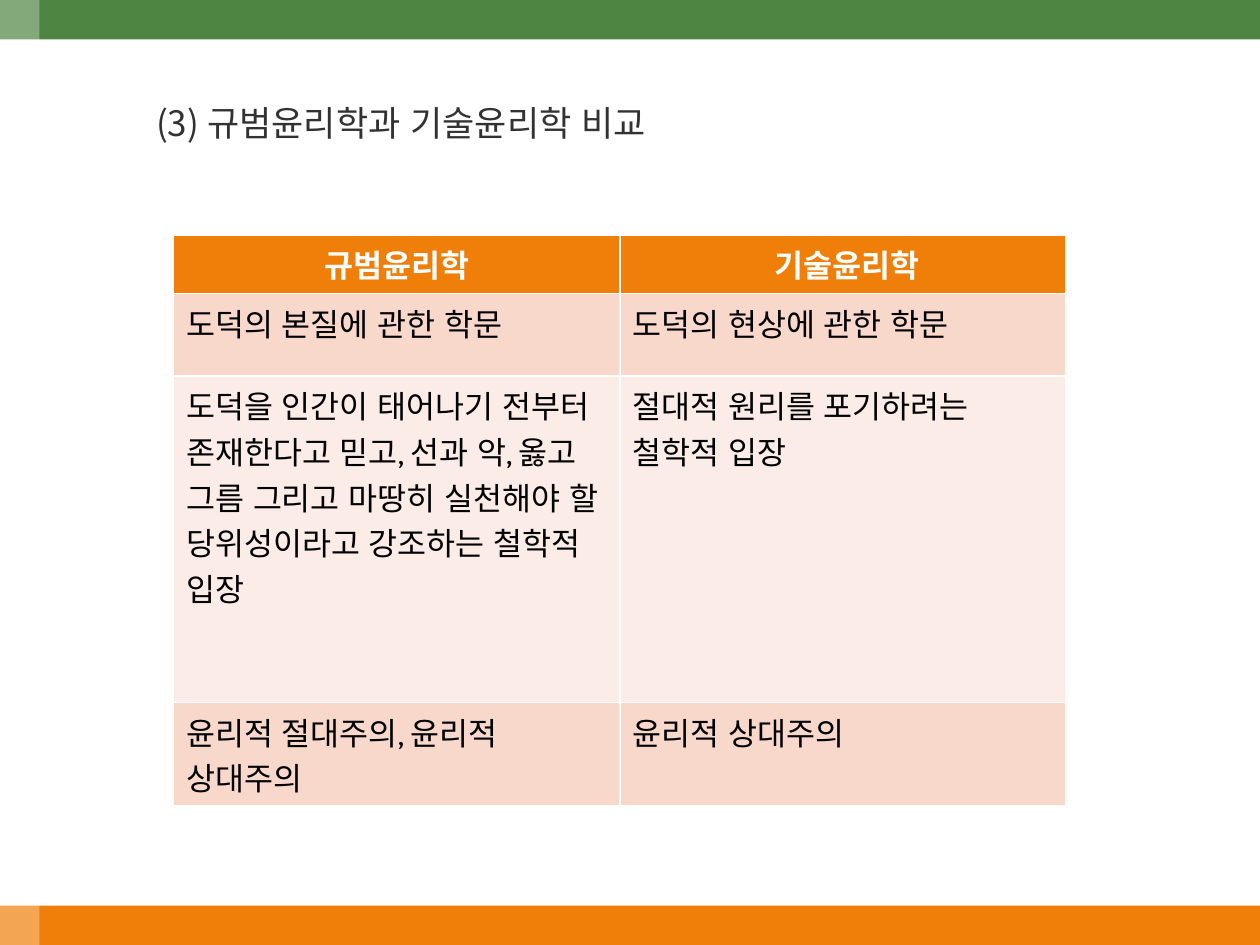
from lxml.etree import SubElement
from pptx import Presentation
from pptx.dml.color import RGBColor
from pptx.enum.lang import MSO_LANGUAGE_ID as Lang
from pptx.enum.shapes import MSO_SHAPE as Shape
from pptx.enum.text import PP_ALIGN as Align
from pptx.oxml.ns import qn
from pptx.util import Pt


def paint(fill, color):
    fill.solid()
    fill.fore_color.rgb = RGBColor.from_string(color)


def style(paragraph, font_name, size, color, bold=False):
    for run in paragraph.runs:
        font = run.font
        font.name, font.size, font.bold = font_name, Pt(size), bold
        font.language_id = Lang.KOREAN
        paint(font.fill, color)
        SubElement(run._r.get_or_add_rPr(), qn("a:ea")).set("typeface", "Noto Sans CJK KR")


deck = Presentation()
deck.slide_width, deck.slide_height = Pt(720), Pt(540)
slide = deck.slides.add_slide(deck.slide_layouts[1])
unused_title = slide.shapes.title._element
unused_title.getparent().remove(unused_title)

bands = [
    (0, 517.5, 720, 22.5, "F07F09"),
    (0, 0, 720, 22.5, "4E8542"),
    (0, 0, 22.5, 540, "FFFFFF"),
]
for left, top, width, height, color in bands:
    band = slide.shapes.add_shape(Shape.RECTANGLE, Pt(left), Pt(top), Pt(width), Pt(height))
    band.shadow.inherit = False
    band.line.fill.background()
    paint(band.fill, color)
white_fill = band.fill._xPr.find(qn("a:solidFill"))
SubElement(white_fill[0], qn("a:alpha")).set("val", "30000")

heading = slide.placeholders[1]
heading.left, heading.top, heading.width, heading.height = Pt(82), Pt(54.5), Pt(562), Pt(433.5)
heading.text_frame.text = "(3) 규범윤리학과 기술윤리학 비교"
heading_line = heading.text_frame.paragraphs[0]
heading_line.space_before = Pt(4)
heading_format = heading_line._p.get_or_add_pPr()
heading_format.set("marL", "0")
heading_format.set("indent", "0")
SubElement(heading_format, qn("a:buNone"))
style(heading_line, "Noto Sans CJK KR", 20, "323232")

comparison = [
    ("규범윤리학", " 기술윤리학"),
    ("도덕의 본질에 관한 학문", "도덕의 현상에 관한 학문"),
    (
        "도덕을 인간이 태어나기 전부터 존재한다고 믿고, 선과 악, 옳고 그름 그리고 마땅히 실천해야 할 당위성이라고 강조하는 철학적 입장",
        "절대적 원리를 포기하려는 철학적 입장",
    ),
    ("윤리적 절대주의, 윤리적 상대주의", "윤리적 상대주의"),
]
row_heights = [33.5, 47.2, 186.5, 47.5]
row_fills = ["F07F09", "F9D8CC", "FCECE7", "F9D8CC"]
table = slide.shapes.add_table(4, 2, Pt(99.2), Pt(134.2), Pt(510), Pt(sum(row_heights))).table
for row, height, fill, texts in zip(table.rows, row_heights, row_fills, comparison):
    row.height = Pt(height)
    is_header = texts == comparison[0]
    for cell, text in zip(row.cells, texts):
        paint(cell.fill, fill)
        cell.text_frame.text = text
        entry = cell.text_frame.paragraphs[0]
        entry.alignment = Align.CENTER if is_header else Align.LEFT
        style(entry, "Cambria", 18, "FFFFFF" if is_header else "000000", is_header)

deck.save("out.pptx")
